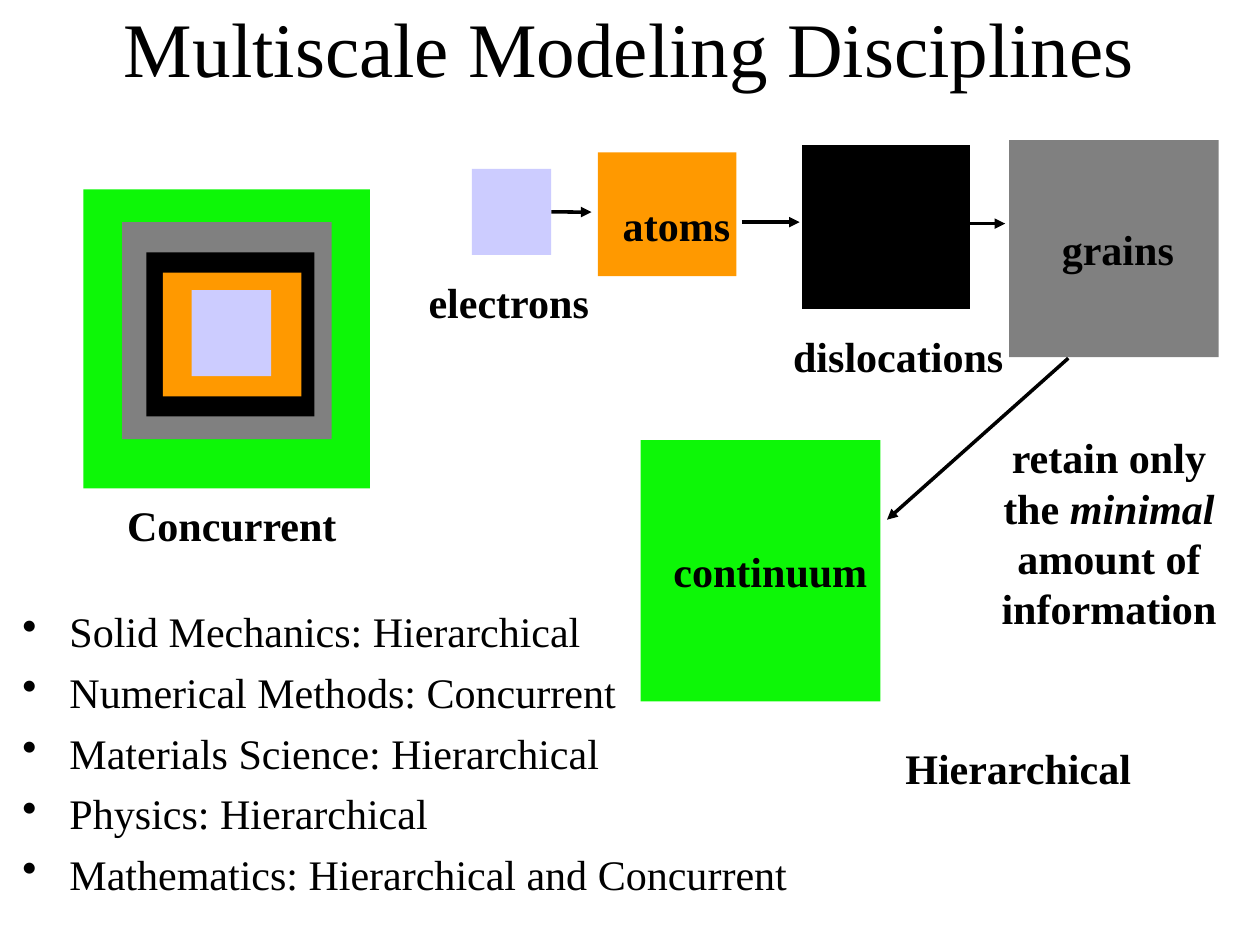
import pptx
import pptx.dml.color
import pptx.enum.shapes
import pptx.enum.text
import pptx.oxml
import pptx.oxml.ns
import pptx.util
from pptx.util import Cm

BLACK = "000000"
ALIGN = pptx.enum.text.PP_ALIGN
ANCHOR = pptx.enum.text.MSO_ANCHOR
SCALES = {
    "electrons": (1.6, 1.73, "CCCCFF"),
    "atoms": (2.79, 2.49, "FF9900"),
    "dislocations": (3.38, 3.3, BLACK),
    "grains": (4.22, 4.37, "808080"),
    "continuum": (5.77, 6.02, "0DF707"),
}
NEST = [
    ("continuum", 1.68, 3.81),
    ("grains", 2.46, 4.47),
    ("dislocations", 2.95, 5.08),
    ("atoms", 3.28, 5.49),
    ("electrons", 3.86, 5.84),
]
CHAIN = [
    ("electrons", 9.5, 3.4),
    ("atoms", 12.04, 3.07),
    ("dislocations", 16.15, 2.92),
    ("grains", 20.32, 2.82),
]
ARROWS = [
    (14.94, 4.47, 16.1, 4.47),
    (18.59, 4.5, 20.24, 4.5),
    (21.51, 7.21, 17.86, 10.46),
]
LABELS = [
    ("continuum", 13.31, 10.85, 4.45),
    ("electrons", 8.38, 5.44, 3.76),
    ("atoms", 12.29, 3.89, 2.69),
    ("dislocations", 15.72, 6.53, 4.78),
    ("grains", 21.13, 4.37, 2.79),
    ("Concurrent", 2.31, 9.93, 4.78),
    ("Hierarchical", 17.98, 14.81, 5.08),
]
FIELDS = [
    "Solid Mechanics: Hierarchical",
    "Numerical Methods: Concurrent",
    "Materials Science: Hierarchical",
    "Physics: Hierarchical",
    "Mathematics: Hierarchical and Concurrent",
]


def tint(fill, code):
    """Make a fill solid in the hex colour."""
    fill.solid()
    fill.fore_color.rgb = pptx.dml.color.RGBColor.from_string(code)


def format(item, values):
    """Set each attribute named in the dict."""
    for name, value in values.items():
        setattr(item, name, value)


def box(shapes, scale, left, top, green=None):
    """Draw the square of one scale."""
    width, height, code = SCALES[scale]
    if green:
        width, height = green
    kind = pptx.enum.shapes.MSO_SHAPE.RECTANGLE
    shape = shapes.add_shape(kind, Cm(left), Cm(top), Cm(width), Cm(height))
    shape.shadow.inherit = False
    tint(shape.fill, code)
    shape.line.fill.background()
    return shape


def arrow(slide, start_x, start_y, end_x, end_y):
    """Draw a black arrow between two points."""
    kind = pptx.enum.shapes.MSO_CONNECTOR.STRAIGHT
    line = slide.shapes.add_connector(
        kind, Cm(start_x), Cm(start_y), Cm(end_x), Cm(end_y))
    line.line.width = pptx.util.Pt(2)
    tint(line.line.fill, BLACK)
    head = pptx.oxml.parse_xml(
        '<a:tailEnd %s type="triangle"/>' % pptx.oxml.ns.nsdecls("a"))
    line.line._get_or_add_ln().append(head)
    flat = "<a:effectLst %s/>" % pptx.oxml.ns.nsdecls("a")
    line._element.spPr.append(pptx.oxml.parse_xml(flat))
    return line


def frame(slide, left, top, width, height, **values):
    """Add a text box and return its frame."""
    place = Cm(left), Cm(top), Cm(width), Cm(height)
    text = slide.shapes.add_textbox(*place).text_frame
    format(text, {"word_wrap": True, **values})
    return text


def write(para, words, size=24, **values):
    """Add a run of black text."""
    run = para.add_run()
    run.text = words
    font = {"name": "Times New Roman", "size": pptx.util.Pt(size)}
    format(run.font, {**font, **values})
    tint(run.font.fill, BLACK)


def bullet(para):
    """Give a paragraph a hanging bullet."""
    props = para._p.get_or_add_pPr()
    props.set("marL", str(Cm(0.95)))
    props.set("indent", str(Cm(-0.95)))
    para.space_before = pptx.util.Pt(5.8)
    mark = '<a:buChar %s char="•"/>' % pptx.oxml.ns.nsdecls("a")
    props.append(pptx.oxml.parse_xml(mark))


def main():
    """Build and save the slide."""
    deck = pptx.Presentation()
    format(deck, {"slide_width": Cm(25.37), "slide_height": Cm(19.02)})
    slide = deck.slides.add_slide(deck.slide_layouts[6])

    title = frame(slide, 1.9, -0.66, 21.56, 3.18,
                  vertical_anchor=ANCHOR.MIDDLE)
    title.paragraphs[0].alignment = ALIGN.CENTER
    write(title.paragraphs[0], "Multiscale Modeling Disciplines", 44)

    body = frame(slide, 0.2, 12.07, 21.56, 6.6)
    for index, field in enumerate(FIELDS):
        para = body.add_paragraph() if index else body.paragraphs[0]
        bullet(para)
        write(para, field)

    group = slide.shapes.add_group_shape()
    for scale, left, top in NEST:
        box(group.shapes, scale, left, top)
    chain = [box(slide.shapes, *item) for item in CHAIN]
    box(slide.shapes, "continuum", 12.9, 8.86, (4.83, 5.26))

    first = arrow(slide, 11.1, 4.27, 11.91, 4.27)
    first.begin_connect(chain[0], 3)
    for ends in ARROWS:
        arrow(slide, *ends)

    for words, left, top, width in LABELS:
        label = frame(slide, left, top, width, 1.27, word_wrap=False)
        write(label.paragraphs[0], words, bold=True)

    note = frame(slide, 19.84, 8.56, 4.98, 4.34).paragraphs[0]
    note.alignment = ALIGN.CENTER
    write(note, "retain only the ", bold=True)
    write(note, "minimal", bold=True, italic=True)
    write(note, " amount of information", bold=True)

    deck.save("out.pptx")


if __name__ == "__main__":
    main()
